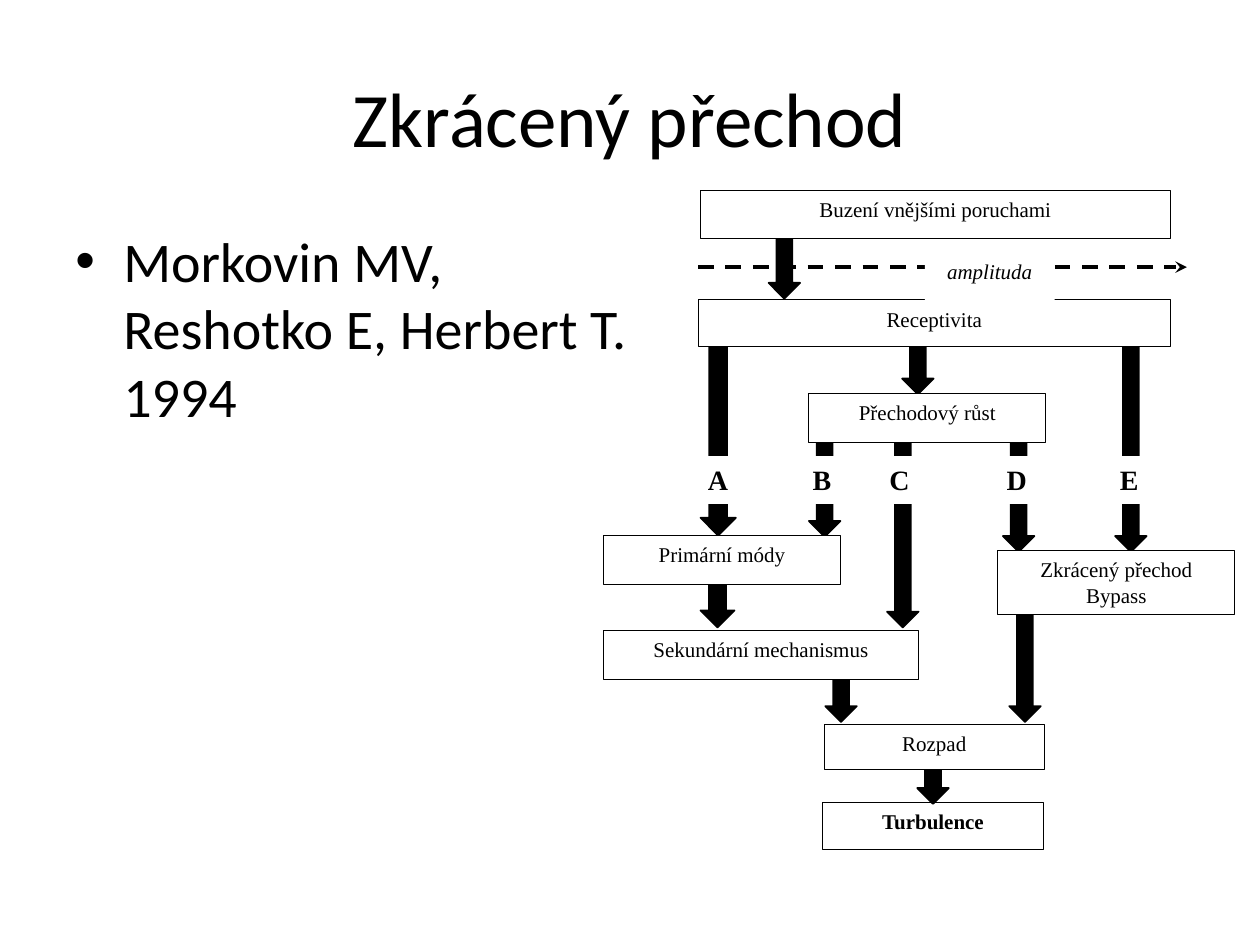
from lxml import etree
from pptx import Presentation
from pptx.dml.color import RGBColor
from pptx.enum.dml import MSO_LINE
from pptx.enum.shapes import MSO_CONNECTOR, MSO_SHAPE
from pptx.enum.text import MSO_ANCHOR, PP_ALIGN
from pptx.oxml.ns import qn
from pptx.util import Inches, Pt

RECT = MSO_SHAPE.RECTANGLE
DOWN = MSO_SHAPE.DOWN_ARROW
STRAIGHT = MSO_CONNECTOR.STRAIGHT
DASH = MSO_LINE.DASH
TOP, MIDDLE = MSO_ANCHOR.TOP, MSO_ANCHOR.MIDDLE
LEFT, CENTER = PP_ALIGN.LEFT, PP_ALIGN.CENTER

COLORS = {"ink": "000000", "paper": "FFFFFF"}
SANS, SERIF = "Calibri", "Times New Roman"

# left, top, width, height
ARROWS = [
    (6.1, 1.62, 0.25, 0.75),
    (7.16, 2.5, 0.25, 0.63),
    (5.56, 2.62, 0.28, 1.63),
    (8.85, 2.62, 0.25, 1.76),
    (6.42, 3.25, 0.25, 1.01),
    (7.04, 3.25, 0.25, 1.73),
    (7.96, 3.25, 0.25, 1.13),
    (5.56, 4.5, 0.27, 0.48),
    (6.55, 5.25, 0.25, 0.48),
    (8.01, 4.87, 0.25, 0.86),
    (7.28, 5.83, 0.25, 0.55),
]
STAGES = [
    ("Buzení vnějšími poruchami", 5.56, 1.51, 3.73, 0.38),
    ("Receptivita", 5.54, 2.38, 3.75, 0.37),
    ("Přechodový růst", 6.42, 3.12, 1.88, 0.39),
    ("Primární módy", 4.79, 4.25, 1.88, 0.39),
    ("Zkrácený přechod\nBypass", 7.92, 4.37, 1.88, 0.51),
    ("Sekundární mechanismus", 4.79, 5, 2.5, 0.39),
    ("Rozpad", 6.54, 5.75, 1.75, 0.36),
]
PATHS = {"A": 5.52, "B": 6.35, "C": 6.96, "D": 7.89, "E": 8.79}


class Sketch:
    def __init__(self, slide):
        self.slide = slide

    def color(self, name):
        return RGBColor.from_string(COLORS[name])

    def style(self, frame, text, size, font, align=CENTER, anchor=TOP,
              bold=False, italic=False):
        """Set the text of a frame and format its runs."""
        frame.text = text
        frame.word_wrap = True
        frame.vertical_anchor = anchor
        for para in frame.paragraphs:
            para.alignment = align
            for run in para.runs:
                run.font.size = Pt(size)
                run.font.name = font
                run.font.bold = bold
                run.font.italic = italic
                run.font.color.rgb = self.color("ink")

    def title(self, text, *area):
        shape = self.slide.shapes.title
        shape.left, shape.top, shape.width, shape.height = map(Inches, area)
        self.style(shape.text_frame, text, 44, SANS, anchor=MIDDLE)

    def bullet(self, text, *area):
        frame = self.slide.shapes.add_textbox(*map(Inches, area)).text_frame
        self.style(frame, text, 32, SANS, LEFT)
        para = frame.paragraphs[0]
        para.space_before = Pt(6.4)
        props = para._p.get_or_add_pPr()
        props.set("marL", str(Inches(0.38)))
        props.set("indent", str(Inches(-0.38)))
        etree.SubElement(props, qn("a:buFont")).set("typeface", "Arial")
        etree.SubElement(props, qn("a:buChar")).set("char", "•")

    def shape(self, kind, area, fill, width=0):
        """Add a preset shape; a width of 0 means no outline."""
        shape = self.slide.shapes.add_shape(kind, *map(Inches, area))
        shape.shadow.inherit = False
        shape.fill.solid()
        shape.fill.fore_color.rgb = self.color(fill)
        if width:
            shape.line.color.rgb = self.color("ink")
            shape.line.width = Pt(width)
        else:
            shape.line.fill.background()
        return shape

    def arrow(self, *area):
        self.shape(DOWN, area, "ink", 1)

    def box(self, text, *area, bold=False):
        shape = self.shape(RECT, area, "paper", 0.5)
        self.style(shape.text_frame, text, 12, SERIF, bold=bold)

    def label(self, text, *area, size=16, **looks):
        shape = self.shape(RECT, area, "paper")
        self.style(shape.text_frame, text, size, SERIF, **looks)

    def axis(self, left, right, top):
        axis = self.slide.shapes.add_connector(
            STRAIGHT, Inches(left), Inches(top), Inches(right), Inches(top))
        axis.line.color.rgb = self.color("ink")
        axis.line.width = Pt(2.25)
        axis.line.dash_style = DASH
        props = axis._element.spPr
        tail = etree.SubElement(props.find(qn("a:ln")), qn("a:tailEnd"))
        tail.set("type", "stealth")
        etree.SubElement(props, qn("a:effectLst"))


def main():
    deck = Presentation()
    deck.slide_width, deck.slide_height = Inches(10), Inches(7.5)
    sketch = Sketch(deck.slides.add_slide(deck.slide_layouts[5]))

    sketch.title("Zkrácený přechod", 0.5, 0.3, 9, 1.25)
    sketch.bullet("Morkovin MV, Reshotko E, Herbert T. 1994",
                  0.5, 1.75, 4.58, 4.95)

    sketch.box("Turbulence", 6.53, 6.37, 1.75, 0.37, bold=True)
    for area in ARROWS:
        sketch.arrow(*area)
    for stage in STAGES:
        sketch.box(*stage)
    for name, left in PATHS.items():
        sketch.label(name, left, 3.62, 0.38, 0.38, align=LEFT, bold=True)

    sketch.axis(5.54, 9.42, 2.12)
    sketch.label("amplituda", 7.34, 2, 1.03, 0.38, size=12, italic=True)

    deck.save("out.pptx")


if __name__ == "__main__":
    main()
